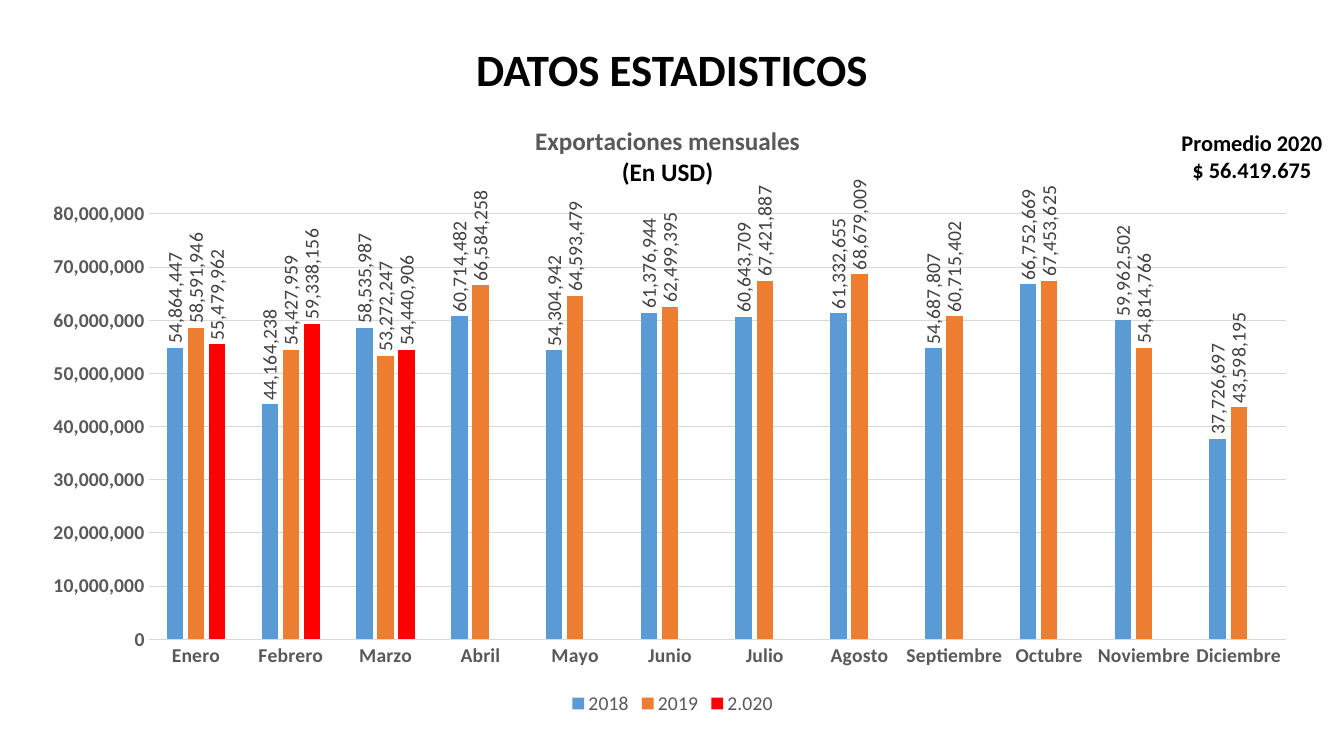
import pptx
import pptx.chart.data
import pptx.dml.color
import pptx.enum.chart
import pptx.enum.text
import pptx.oxml
import pptx.oxml.ns
import pptx.util

Pt = pptx.util.Pt
ALIGN = pptx.enum.text.PP_ALIGN
GREY = "595959"
GRID = "D9D9D9"


def color(value):
    return pptx.dml.color.RGBColor.from_string(value)


def style(font, size, value, bold=False):
    font.name = "Calibri"
    font.size = Pt(size)
    font.bold = bold
    font.color.rgb = color(value)


presentation = pptx.Presentation()
presentation.slide_width = Pt(960)
presentation.slide_height = Pt(540)
slide = presentation.slides.add_slide(presentation.slide_layouts[5])

title = slide.shapes.title
title.left, title.top, title.width, title.height = Pt(66), Pt(-1), Pt(828), Pt(104.5)
title.text_frame.vertical_anchor = pptx.enum.text.MSO_ANCHOR.MIDDLE
paragraph = title.text_frame.paragraphs[0]
paragraph.alignment = ALIGN.CENTER
paragraph.line_spacing = 0.9
run = paragraph.add_run()
run.text = "DATOS ESTADISTICOS"
style(run.font, 32, "000000", True)

months = ["Enero", "Febrero", "Marzo", "Abril", "Mayo", "Junio", "Julio",
          "Agosto", "Septiembre", "Octubre", "Noviembre", "Diciembre"]
exports = [
    ("2018", "5B9BD5", [54864447, 44164238, 58535987, 60714482, 54304942, 61376944,
                        60643709, 61332655, 54687807, 66752669, 59962502, 37726697]),
    ("2019", "ED7D31", [58591946, 54427959, 53272247, 66584258, 64593479, 62499395,
                        67421887, 68679009, 60715402, 67453625, 54814766, 43598195]),
    ("2.020", "FF0000", [55479962, 59338156, 54440906] + [None] * 9),
]
chart_data = pptx.chart.data.CategoryChartData(number_format="#,##0")
chart_data.categories = months
for year, fill, values in exports:
    chart_data.add_series(year, values)

chart = slide.shapes.add_chart(
    pptx.enum.chart.XL_CHART_TYPE.COLUMN_CLUSTERED,
    Pt(24), Pt(73.5), Pt(913), Pt(440.5), chart_data).chart
style(chart.font, 10, "000000")

chart.has_title = True
title_frame = chart.chart_title.text_frame
for index, (text, value) in enumerate([("Exportaciones mensuales", GREY), ("(En USD)", "000000")]):
    paragraph = title_frame.add_paragraph() if index else title_frame.paragraphs[0]
    run = paragraph.add_run()
    run.text = text
    style(run.font, 18, value, True)

chart.has_legend = True
chart.legend.position = pptx.enum.chart.XL_LEGEND_POSITION.BOTTOM
chart.legend.include_in_layout = False
style(chart.legend.font, 14, GREY)

for axis in (chart.category_axis, chart.value_axis):
    axis.major_tick_mark = pptx.enum.chart.XL_TICK_MARK.NONE
    axis.minor_tick_mark = pptx.enum.chart.XL_TICK_MARK.NONE
    style(axis.tick_labels.font, 14, GREY, True)
chart.value_axis.format.line.fill.background()
chart.value_axis.minimum_scale = 0
chart.value_axis.maximum_scale = 80000000
chart.value_axis.major_unit = 10000000
chart.value_axis.tick_labels.number_format = "#,##0"
chart.value_axis.tick_labels.number_format_is_linked = False
for line in (chart.category_axis.format.line, chart.value_axis.major_gridlines.format.line):
    line.color.rgb = color(GRID)
    line.width = Pt(0.75)

plot = chart.plots[0]
plot.gap_width = 219
plot.overlap = -27
plot.vary_by_categories = False
for series, (year, fill, values) in zip(plot.series, exports):
    series.format.fill.solid()
    series.format.fill.fore_color.rgb = color(fill)
    series.invert_if_negative = False
    labels = series.data_labels
    labels.show_value = True
    labels.position = pptx.enum.chart.XL_LABEL_POSITION.OUTSIDE_END
    labels.number_format = "#,##0"
    labels.number_format_is_linked = False
    style(labels.font, 14, "404040")

for body in chart.element.xpath(".//c:dLbls/c:txPr/a:bodyPr"):
    body.set("rot", "-5400000")
    body.set("vert", "horz")

layouts = [
    ("c:title", 1, "", {"x": 0.39, "y": 0.03}),
    ("c:plotArea", 0, '<c:layoutTarget val="inner"/>', {"x": 0.09, "y": 0.18, "w": 0.89, "h": 0.69}),
]
for tag, place, target, box in layouts:
    parent = chart.element.xpath("c:chart/" + tag)[0]
    for old_layout in parent.xpath("c:layout"):
        parent.remove(old_layout)
    modes = "".join(f'<c:{key}Mode val="edge"/>' for key in "xy")
    sizes = "".join(f'<c:{key} val="{value}"/>' for key, value in box.items())
    parent.insert(place, pptx.oxml.parse_xml(
        f'<c:layout {pptx.oxml.ns.nsdecls("c")}><c:manualLayout>'
        f'{target}{modes}{sizes}</c:manualLayout></c:layout>'))

average = slide.shapes.add_textbox(Pt(836), Pt(88.5), Pt(116.5), Pt(65.5))
average.text_frame.word_wrap = False
for index, text in enumerate(["Promedio 2020", "$ 56.419.675"]):
    paragraph = average.text_frame.add_paragraph() if index else average.text_frame.paragraphs[0]
    paragraph.alignment = ALIGN.CENTER
    run = paragraph.add_run()
    run.text = text
    style(run.font, 16, "000000", True)

presentation.save("out.pptx")
